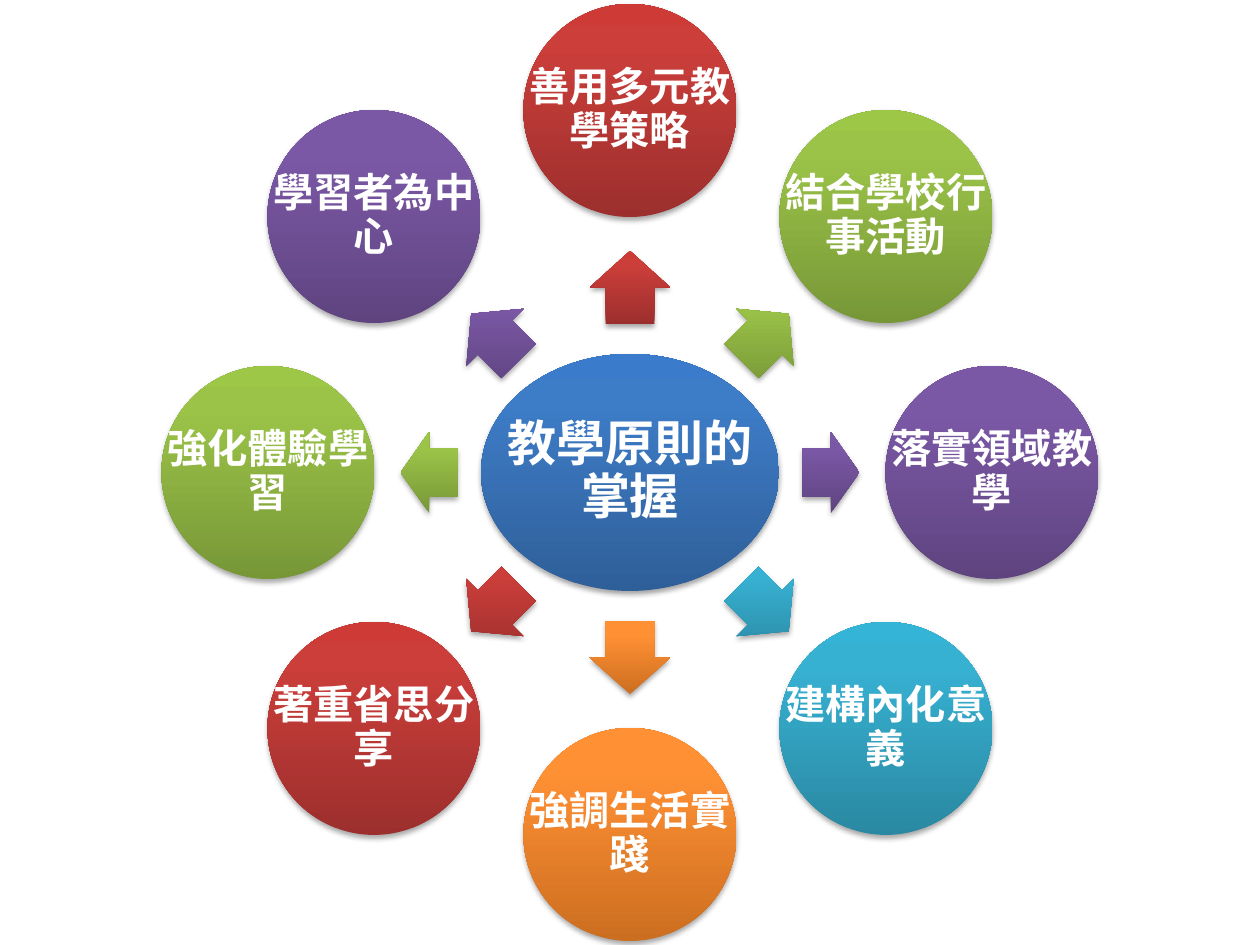
from dataclasses import dataclass
from math import cos, radians, sin

from lxml import etree
from pptx import Presentation
from pptx.dml.color import RGBColor
from pptx.enum.shapes import MSO_SHAPE
from pptx.enum.text import MSO_ANCHOR, PP_ALIGN
from pptx.oxml import parse_xml
from pptx.oxml.ns import nsdecls, qn
from pptx.shapes.autoshape import Shape
from pptx.util import Emu, Inches, Pt

ELLIPSE = MSO_SHAPE.OVAL
ARROW = MSO_SHAPE.RIGHT_ARROW
CENTER = PP_ALIGN.CENTER
MIDDLE = MSO_ANCHOR.MIDDLE

SLIDE_W, SLIDE_H = 1260, 945
EMU_PER_PX = Inches(10) / SLIDE_W
CENTER_X, CENTER_Y = SLIDE_W / 2, SLIDE_H / 2
HUB_W, HUB_H = 298, 237
CIRCLE = 213
RING_RADIUS = 362
ARROW_WIDTH = 81
FONT = "Calibri"

COLORS = {"text": "FFFFFF", "shadow": "000000"}
# Gradient stops at 0, 80 and 100 percent, from bottom to top
GRADIENTS = {
    "blue": ("2F5F99", "3D7CC7", "3A7CCB"),
    "red": ("9C2F2D", "CB3E3A", "CE3B37"),
    "green": ("779737", "9BC348", "9DC746"),
    "purple": ("5F4480", "7B58A6", "7C57A8"),
    "teal": ("2A88A2", "37B1D2", "34B4D6"),
    "orange": ("CC6E20", "FF9034", "FF9136"),
}


@dataclass(frozen=True)
class Principle:
    label: str
    gradient: str


@dataclass(frozen=True)
class ArrowFit:
    """Arrow length and distance of its middle from the hub."""
    length: int
    radius: int


PRINCIPLES = [
    Principle("善用多元教學策略", "red"),
    Principle("結合學校行事活動", "green"),
    Principle("落實領域教學", "purple"),
    Principle("建構內化意義", "teal"),
    Principle("強調生活實踐", "orange"),
    Principle("著重省思分享", "red"),
    Principle("強化體驗學習", "green"),
    Principle("學習者為中心", "purple"),
]
VERTICAL = ArrowFit(73, 185)
DIAGONAL = ArrowFit(67, 191)
HORIZONTAL = ArrowFit(57, 201)
ARROW_CYCLE = [VERTICAL, DIAGONAL, HORIZONTAL, DIAGONAL]


def px(length: float) -> Emu:
    return Emu(round(length * EMU_PER_PX))


def box(x: float, y: float, width: float, height: float) -> list[Emu]:
    """Left, top, width and height of a box centred on x, y."""
    return [px(v) for v in (x - width / 2, y - height / 2, width, height)]


def polar(radius: float, angle: float) -> tuple[float, float]:
    turn = radians(angle)
    return CENTER_X + radius * cos(turn), CENTER_Y + radius * sin(turn)


def style(shape: Shape, gradient: str) -> None:
    """Give an upright three-stop gradient, no line and a soft shadow below."""
    shape.line.fill.background()
    shape.shadow.inherit = False
    stops = "".join(
        f'<a:gs pos="{position}"><a:srgbClr val="{color}"/></a:gs>'
        for position, color in zip((0, 80000, 100000), GRADIENTS[gradient])
    )
    properties = shape.fill._xPr
    properties.find(qn("a:prstGeom")).addnext(parse_xml(
        f'<a:gradFill {nsdecls("a")} rotWithShape="0"><a:gsLst>{stops}</a:gsLst>'
        '<a:lin ang="16200000" scaled="0"/></a:gradFill>'
    ))
    shadow = etree.SubElement(
        properties.find(qn("a:effectLst")), qn("a:outerShdw"),
        blurRad=str(Pt(3.1)), dist=str(Pt(1.8)), dir="5400000", rotWithShape="0",
    )
    color = etree.SubElement(shadow, qn("a:srgbClr"), val=COLORS["shadow"])
    etree.SubElement(color, qn("a:alpha"), val="35000")


def add_label(shapes, bounds: list[Emu], label: str, size: int, inset: int) -> None:
    frame = shapes.add_textbox(*bounds).text_frame
    frame.word_wrap = True
    frame.vertical_anchor = MIDDLE
    frame.margin_left = frame.margin_right = px(inset)
    frame.margin_top = frame.margin_bottom = px(inset)
    paragraph = frame.paragraphs[0]
    paragraph.alignment = CENTER
    paragraph.line_spacing = 0.9
    paragraph.space_after = Pt(round(size * 0.35))
    run = paragraph.add_run()
    run.text = label
    run.font.name = FONT
    run.font.size = Pt(size)
    run.font.bold = True
    run.font.color.rgb = RGBColor.from_string(COLORS["text"])


def add_ellipse(shapes, bounds: list[Emu], principle: Principle,
                size: int, inset: int) -> None:
    style(shapes.add_shape(ELLIPSE, *bounds), principle.gradient)
    # A separate box lets the label run across the full width of the ellipse
    add_label(shapes, bounds, principle.label, size, inset)


def add_arrow(shapes, fit: ArrowFit, angle: float, gradient: str) -> None:
    bounds = box(*polar(fit.radius, angle), fit.length, ARROW_WIDTH)
    arrow = shapes.add_shape(ARROW, *bounds)
    arrow.adjustments[0] = 0.6
    arrow.adjustments[1] = 0.5
    arrow.rotation = angle % 360
    style(arrow, gradient)


def main() -> None:
    deck = Presentation()
    deck.slide_width, deck.slide_height = px(SLIDE_W), px(SLIDE_H)
    shapes = deck.slides.add_slide(deck.slide_layouts[6]).shapes

    hub = Principle("教學原則的掌握", "blue")
    add_ellipse(shapes, box(CENTER_X, CENTER_Y, HUB_W, HUB_H), hub, 28, 5)

    step = 360 / len(PRINCIPLES)
    for index, principle in enumerate(PRINCIPLES):
        angle = index * step - 90
        fit = ARROW_CYCLE[index % len(ARROW_CYCLE)]
        add_arrow(shapes, fit, angle, principle.gradient)
        circle = box(*polar(RING_RADIUS, angle), CIRCLE, CIRCLE)
        add_ellipse(shapes, circle, principle, 23, 4)

    deck.save("out.pptx")


if __name__ == "__main__":
    main()
